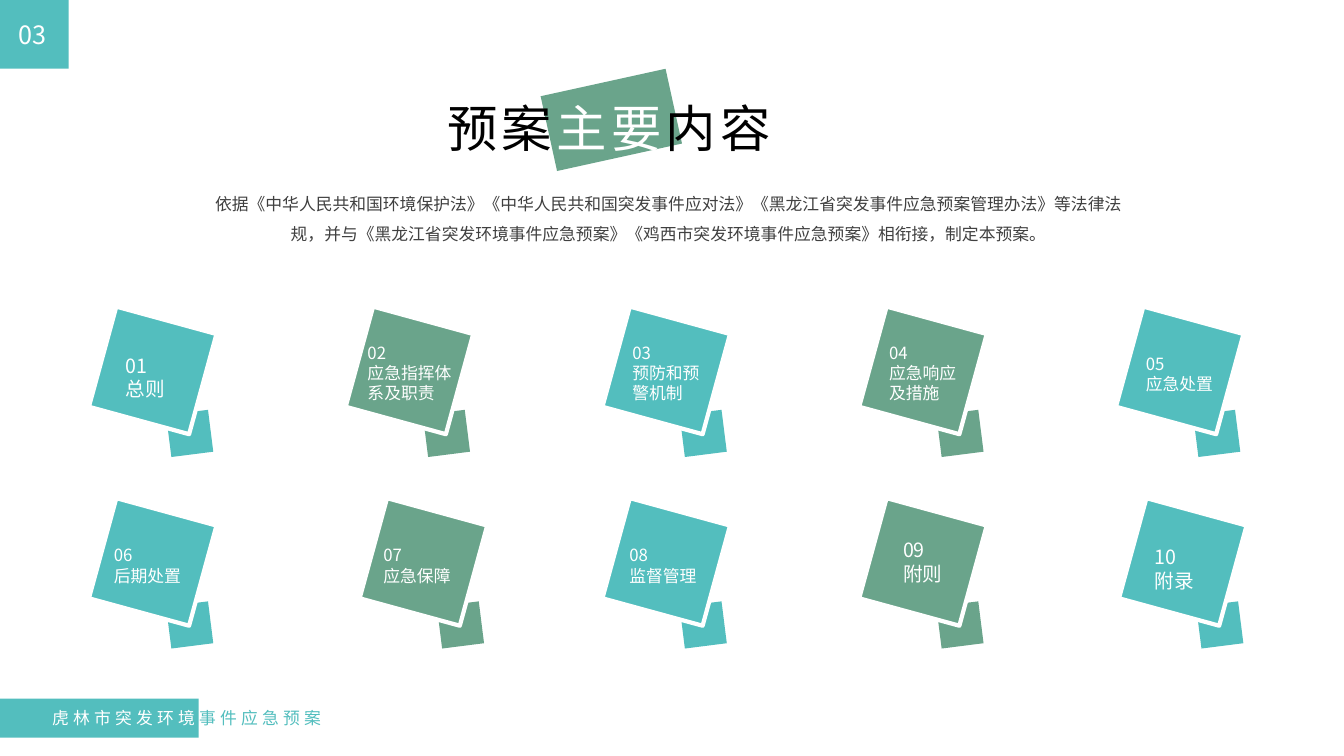
from lxml import etree
from pptx import Presentation
from pptx.dml.color import RGBColor
from pptx.enum import shapes, text
from pptx.oxml import ns
from pptx.util import Pt

TEAL, GREEN, WHITE = "53BEBE", "6AA48B", "FFFFFF"
FONT = "Noto Sans CJK SC"


def rgb(value):
    return RGBColor.from_string(value)


class Deck:
    def __init__(self, slide, font):
        self.slide = slide
        self.font = font
        self.canvas = slide.shapes

    def group(self):
        self.canvas = self.slide.shapes.add_group_shape().shapes

    def ungroup(self):
        self.canvas = self.slide.shapes

    def rect(self, x, y, w, h, fill, angle=0, outline=None):
        sp = self.canvas.add_shape(
            shapes.MSO_SHAPE.RECTANGLE, Pt(x), Pt(y), Pt(w), Pt(h))
        sp.shadow.inherit = False
        sp.rotation = angle
        sp.fill.solid()
        sp.fill.fore_color.rgb = rgb(fill)
        if outline:
            sp.line.color.rgb = rgb(outline)
            sp.line.width = Pt(3)
        else:
            sp.line.fill.background()

    def text(self, x, y, w, h, lines, size, wrap=False, spacing=0,
             align=text.PP_ALIGN.LEFT, leading=None):
        sp = self.canvas.add_textbox(Pt(x), Pt(y), Pt(w), Pt(h))
        tf = sp.text_frame
        tf.word_wrap = wrap
        tf.auto_size = text.MSO_AUTO_SIZE.SHAPE_TO_FIT_TEXT
        for i, runs in enumerate(lines):
            p = tf.add_paragraph() if i else tf.paragraphs[0]
            p.alignment = align
            p.line_spacing = leading
            for words, color in runs:
                r = p.add_run()
                r.text = words
                r.font.size = Pt(size)
                r.font.name = self.font
                r.font.color.rgb = rgb(color)
                props = r._r.get_or_add_rPr()
                etree.SubElement(props, ns.qn("a:ea"), typeface=self.font)
                if spacing:
                    props.set("spc", str(spacing * 100))

    def card(self, x, y, fill, lines, size, dx, dy):
        self.group()
        self.rect(x + 48.4, y + 67, 30.2, 30.2, fill, 352.8)
        self.rect(x, y, 74.2, 74.2, fill, 15.3, WHITE)
        w = max(map(len, lines)) * size + 14.4
        h = len(lines) * size * 1.2 + 7.2
        self.text(x + dx, y + dy, w, h, [[(t, WHITE)] for t in lines], size)
        self.ungroup()


CARDS = [
    (["总则"], 14, 0, 10.8, 21.6),
    (["应急指挥体", "系及职责"], 12, 0, 0, 13.7),
    (["预防和预", "警机制"], 12, 0, 5.8, 13.7),
    (["应急响应", "及措施"], 12, 0, 5.8, 13.7),
    (["应急处置"], 12, 0, 5.8, 21.6),
    (["后期处置"], 12, 0, 2.2, 21.6),
    (["应急保障"], 12, 10, 1.4, 21.6),
    (["监督管理"], 12, 0, 3.6, 21.6),
    (["附则"], 14, 0, 15.8, 16.6),
    (["附录"], 14, 2.2, 10.1, 21.6),
]


def main():
    prs = Presentation()
    prs.slide_width, prs.slide_height = Pt(960), Pt(540)
    s = prs.slides.add_slide(prs.slide_layouts[6])
    deck = Deck(s, FONT)

    deck.group()
    deck.rect(0, 0, 49, 49, TEAL)
    deck.text(6.2, 10.1, 36, 28.8, [[("03", WHITE)]], 18)

    deck.group()
    deck.rect(391, 58.3, 91.4, 54.7, GREEN, 347.6)
    deck.text(312.4, 65.5, 248.4, 51,
              [[("预案", "000000"), ("主要", WHITE), ("内容", "000000")]],
              36, spacing=3)
    basis = ("依据《中华人民共和国环境保护法》《中华人民共和国突发事件应对法》"
             "《黑龙江省突发事件应急预案管理办法》等法律法规，"
             "并与《黑龙江省突发环境事件应急预案》"
             "《鸡西市突发环境事件应急预案》相衔接，制定本预案。")
    deck.text(141.8, 127.4, 671.8, 51, [[(basis, "404040")]], 12, wrap=True,
              align=text.PP_ALIGN.CENTER, leading=1.5)
    deck.ungroup()

    deck.rect(0, 499, 142, 28, TEAL)
    deck.text(30.2, 501.8, 335.5, 21.6,
              [[("虎林市突发环境", WHITE), ("事件应急预案", TEAL)]],
              12, wrap=True, spacing=3)

    for i, (title, size, shift, dx, dy) in enumerate(CARDS):
        row, col = divmod(i, 5)
        deck.card(72 + col * 183.4 + shift, 227.5 + row * 136.8,
                  GREEN if col % 2 else TEAL,
                  [f"{i + 1:02}"] + title, size, dx, dy)

    prs.save("out.pptx")


if __name__ == "__main__":
    main()
